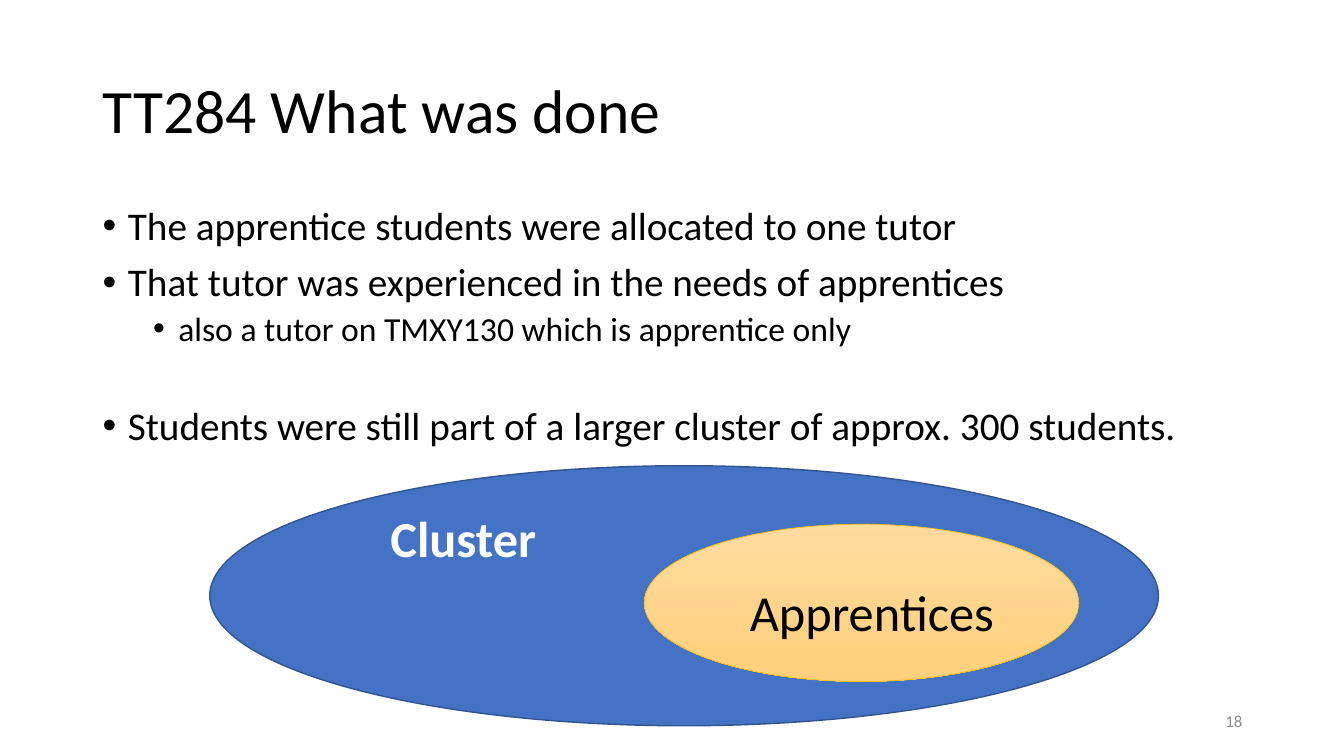
import pptx
import pptx.dml.color
import pptx.enum.shapes
import pptx.enum.text
import pptx.util
from lxml import etree

Inches, Pt = pptx.util.Inches, pptx.util.Pt
ANCHOR, ALIGN = pptx.enum.text.MSO_ANCHOR, pptx.enum.text.PP_ALIGN
W, H = 13.33, 7.5
NS = "http://schemas.openxmlformats.org/drawingml/2006/main"
LEVELS = [
    {"size": 28, "indent": 0.25, "before": 10},
    {"size": 24, "indent": 0.75, "before": 5},
]
BULLETS = [
    ("The apprentice students were allocated to one tutor", 0, 0),
    ("That tutor was experienced in the needs of apprentices", 0, 0),
    ("also a tutor on TMXY130 which is apprentice only", 1, 0),
    ("Students were still part of a larger cluster of approx. 300 students.", 0, 31.4),
]


def rgb(value):
    """Turn a hex string into a colour."""
    return pptx.dml.color.RGBColor.from_string(value)


def apply(obj, **formats):
    """Set each format value on an object."""
    for name, value in formats.items():
        setattr(obj, name, value)


def within(box, left, top, width, height):
    """Return the box given by shares of an outer box."""
    x, y, w, h = box
    return x + left * w, y + top * h, width * w, height * h


def add_run(p, text, size, color="000000", bold=False):
    """Add a formatted run to a paragraph."""
    r = p.add_run()
    r.text = text
    apply(r.font, name="Calibri", size=Pt(size), bold=bold)
    r.font.color.rgb = rgb(color)


def add_frame(slide, box, anchor=ANCHOR.TOP):
    """Add a wrapping text box and return its text frame."""
    tf = slide.shapes.add_textbox(*map(Inches, box)).text_frame
    apply(tf, word_wrap=True, vertical_anchor=anchor)
    return tf


def add_label(slide, box, text, size, color="000000", bold=False,
              anchor=ANCHOR.TOP, **formats):
    """Add a single line of text in a box."""
    p = add_frame(slide, box, anchor).paragraphs[0]
    apply(p, **formats)
    add_run(p, text, size, color, bold)


def add_bullets(slide, box, items):
    """Add a bulleted list with two levels."""
    tf = add_frame(slide, box)
    for i, (text, level, gap) in enumerate(items):
        p = tf.add_paragraph() if i else tf.paragraphs[0]
        style = LEVELS[level]
        apply(p, level=level, line_spacing=0.9, space_before=Pt(style["before"] + gap))
        add_run(p, text, style["size"])
        pPr = p._p.get_or_add_pPr()
        pPr.set("marL", str(Inches(style["indent"])))
        pPr.set("indent", str(Inches(-0.25)))
        etree.SubElement(pPr, f"{{{NS}}}buFont").set("typeface", "Arial")
        etree.SubElement(pPr, f"{{{NS}}}buChar").set("char", "•")


def add_ellipse(slide, box, colors, line, width):
    """Add an ellipse with a solid or a top-to-bottom gradient fill."""
    oval = pptx.enum.shapes.MSO_SHAPE.OVAL
    sp = slide.shapes.add_shape(oval, *map(Inches, box))
    sp.shadow.inherit = False
    if len(colors) == 1:
        sp.fill.solid()
        sp.fill.fore_color.rgb = rgb(colors[0])
    else:
        sp.fill.gradient()
        sp.fill.gradient_angle = 270
        for stop, color in zip(sp.fill.gradient_stops, colors):
            stop.color.rgb = rgb(color)
    sp.line.color.rgb = rgb(line)
    sp.line.width = Pt(width)


def add_cluster(slide, box):
    """Draw the cluster with the apprentices inside it."""
    add_ellipse(slide, box, ["4472C4"], "325491", 1)
    add_label(slide, within(box, 0.18, 0.14, 0.2, 0.28), "Cluster", 36, "FFFFFF", True)
    inner = within(box, 0.458, 0.225, 0.458, 0.605)
    add_ellipse(slide, inner, ["FFDB9E", "FFD07C"], "FFC000", 0.5)
    add_label(slide, within(inner, 0.22, 0.33, 0.66, 0.46), "Apprentices", 36)


def build_slide(prs):
    """Place the title, list, diagram and page number."""
    slide = prs.slides.add_slide(prs.slide_layouts[6])
    add_label(slide, (0.92, 0.4, 11.5, 1.45), "TT284 What was done", 44,
              anchor=ANCHOR.MIDDLE, line_spacing=0.9)
    add_bullets(slide, (0.92, 2, 11.89, 4.76), BULLETS)
    add_cluster(slide, (2.08, 4.62, 9.41, 2.58))
    add_label(slide, (9.42, 6.95, 3, 0.4), "18", 12, "8C8C8C",
              anchor=ANCHOR.MIDDLE, alignment=ALIGN.RIGHT)


def main():
    """Build and save the presentation."""
    prs = pptx.Presentation()
    apply(prs, slide_width=Inches(W), slide_height=Inches(H))
    build_slide(prs)
    prs.save("out.pptx")


if __name__ == "__main__":
    main()
